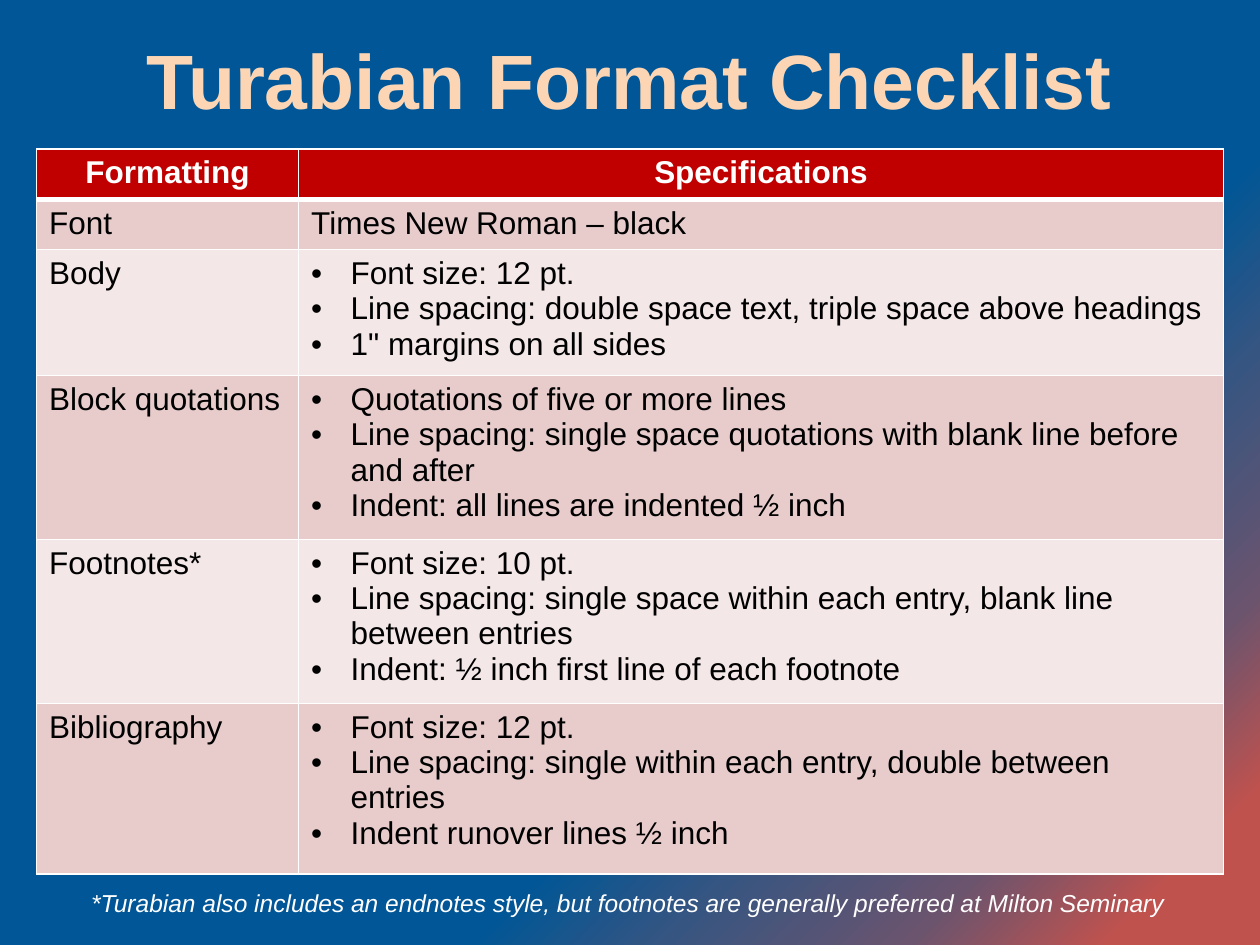
import dataclasses

import lxml.etree
import pptx
import pptx.dml.color
import pptx.enum.text
import pptx.oxml.ns
import pptx.util

Pt = pptx.util.Pt
qn = pptx.oxml.ns.qn
ALIGN = pptx.enum.text.PP_ALIGN
ANCHOR = pptx.enum.text.MSO_ANCHOR

COLORS = {
    "blue": "005696", "slate": "375581", "mauve": "6B546E", "coral": "C0524E",
    "peach": "FCD5B5", "white": "FFFFFF", "black": "000000",
    "red": "C00000", "rose": "E8CCCC", "pale": "F4E7E7",
}
STOPS = [(8, "blue"), (73, "slate"), (84, "mauve"), (93, "coral")]
STOPS[1:1] = [(64, "blue")]
COLS = [149.76, 528.48]
INDENT = 22.5


@dataclasses.dataclass
class Style:
    size: float
    color: str
    bold: bool = False
    italic: bool = False
    align: ALIGN = ALIGN.LEFT


@dataclasses.dataclass
class Entry:
    label: str
    specs: list[str]
    height: float


HEAD = Style(18, "white", bold=True, align=ALIGN.CENTER)
BODY = Style(18, "black")

ENTRIES = [
    Entry("Font", ["Times New Roman – black"], 27.4),
    Entry("Body", [
        "Font size: 12 pt.",
        "Line spacing: double space text, triple space above headings",
        "1\" margins on all sides"], 67.5),
    Entry("Block quotations", [
        "Quotations of five or more lines",
        "Line spacing: single space quotations with blank line before and after",
        "Indent: all lines are indented ½ inch"], 89),
    Entry("Footnotes*", [
        "Font size: 10 pt.",
        "Line spacing: single space within each entry, blank line between entries",
        "Indent: ½ inch first line of each footnote"], 89),
    Entry("Bibliography", [
        "Font size: 12 pt.",
        "Line spacing: single within each entry, double between entries",
        "Indent runover lines ½ inch"], 97.4),
]


def add_color(parent, name: str) -> None:
    lxml.etree.SubElement(parent, qn("a:srgbClr"), val=COLORS[name])


def paint_back(slide) -> None:
    """Fill the background with the diagonal gradient."""
    fill = slide.background.fill
    fill.gradient()
    fill.gradient_angle = 315
    stops = slide.element.find(".//" + qn("a:gsLst"))
    for stop in list(stops):
        stops.remove(stop)
    for spot, name in STOPS:
        add_color(lxml.etree.SubElement(stops, qn("a:gs"), pos=str(spot * 1000)), name)


def write(frame, lines: list[str], style: Style) -> None:
    """Write one paragraph per line, with bullets if there are several."""
    for i, line in enumerate(lines):
        para = frame.paragraphs[0] if i == 0 else frame.add_paragraph()
        para.alignment = style.align
        run = para.add_run()
        run.text = line
        font = run.font
        font.name, font.size = "Arial", Pt(style.size)
        font.bold, font.italic = style.bold, style.italic
        font.color.rgb = pptx.dml.color.RGBColor.from_string(COLORS[style.color])
        if len(lines) > 1:
            props = para._p.get_or_add_pPr()
            props.set("marL", str(Pt(INDENT)))
            props.set("indent", str(-Pt(INDENT)))
            lxml.etree.SubElement(props, qn("a:buFont"), typeface="Arial")
            lxml.etree.SubElement(props, qn("a:buChar"), char="•")


def add_text(slide, box: tuple, text: str, style: Style, anchor: ANCHOR) -> None:
    frame = slide.shapes.add_textbox(*map(Pt, box)).text_frame
    frame.word_wrap = True
    frame.vertical_anchor = anchor
    write(frame, [text], style)


def fill_cell(cell, lines: list[str], style: Style, color: str,
              top: float = 1, base: float = 1) -> None:
    """Write and paint a cell; top and base are its border widths."""
    write(cell.text_frame, lines, style)
    props = cell._tc.get_or_add_tcPr()
    for side, width in zip("LRTB", (1, 1, top, base)):
        line = lxml.etree.SubElement(props, qn("a:ln" + side), w=str(Pt(width)))
        add_color(lxml.etree.SubElement(line, qn("a:solidFill")), "white")
    cell.fill.solid()
    cell.fill.fore_color.rgb = pptx.dml.color.RGBColor.from_string(COLORS[color])


def add_list(slide) -> None:
    """Add the table of formatting rules."""
    tall = [27.4] + [entry.height for entry in ENTRIES]
    table = slide.shapes.add_table(
        len(tall), len(COLS), Pt(20.9), Pt(85), Pt(sum(COLS)), Pt(sum(tall))).table
    table.horz_banding = False
    for col, width in zip(table.columns, COLS):
        col.width = Pt(width)
    for row, height in zip(table.rows, tall):
        row.height = Pt(height)
    for i, text in enumerate(["Formatting", "Specifications"]):
        fill_cell(table.cell(0, i), [text], HEAD, "red", base=3)
    for i, entry in enumerate(ENTRIES, 1):
        color = "rose" if i % 2 else "pale"
        top = 3 if i == 1 else 1
        fill_cell(table.cell(i, 0), [entry.label], BODY, color, top)
        fill_cell(table.cell(i, 1), entry.specs, BODY, color, top)


def main() -> None:
    deck = pptx.Presentation()
    deck.slide_width, deck.slide_height = Pt(720), Pt(540)
    slide = deck.slides.add_slide(deck.slide_layouts[6])
    paint_back(slide)
    add_text(slide, (0, 6, 720, 78), "Turabian Format Checklist",
             Style(44, "peach", bold=True, align=ALIGN.CENTER), ANCHOR.MIDDLE)
    add_list(slide)
    add_text(slide, (0, 504, 718, 24.5),
             "*Turabian also includes an endnotes style, but footnotes are "
             "generally preferred at Milton Seminary",
             Style(14, "white", italic=True, align=ALIGN.CENTER), ANCHOR.TOP)
    deck.save("out.pptx")


if __name__ == "__main__":
    main()
